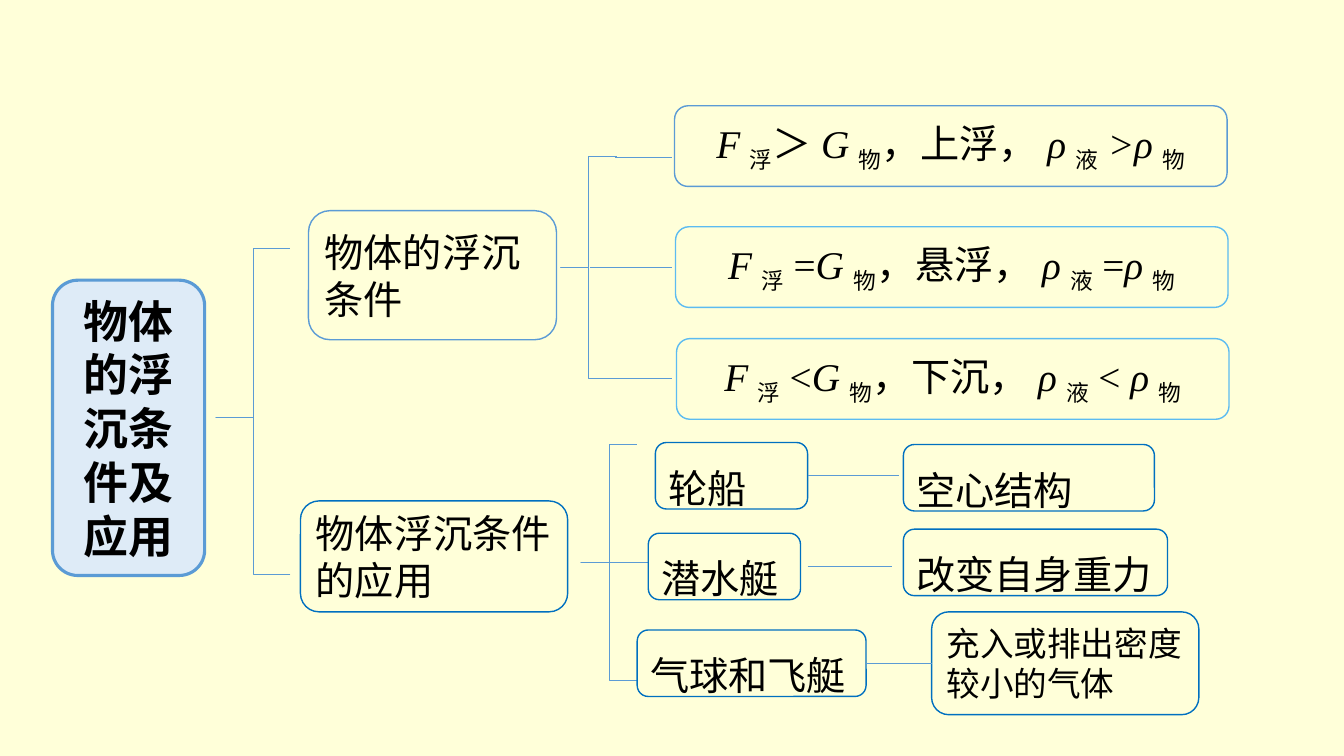
from pptx import Presentation
from pptx.dml.color import RGBColor
from pptx.enum.shapes import MSO_CONNECTOR, MSO_SHAPE
from pptx.enum.text import MSO_ANCHOR, MSO_AUTO_SIZE, PP_ALIGN
from pptx.oxml.ns import qn
from pptx.util import Inches, Pt
from lxml.etree import SubElement

COLORS = {"page": "FFFFD9", "root": "DEEBF7", "branch": "5B9BD5",
          "application": "0070C0", "formula": "5CBBF1", "text": "000000"}
VARIABLE, SUBSCRIPT, PLAIN = {"italic": True}, {"baseline": -25000}, {}


def rgb(name):
    return RGBColor.from_string(COLORS[name])


def add_outline(slide, preset, box, color, weight, fill=None):
    outline = slide.shapes.add_shape(preset, *map(Inches, box))
    outline.shadow.inherit = False
    if fill:
        outline.fill.solid()
        outline.fill.fore_color.rgb = rgb(fill)
    else:
        outline.fill.background()
    outline.line.color.rgb = rgb(color)
    outline.line.width = Pt(weight)
    return outline


def add_node(slide, box, runs, color="application", weight=1, fill=None,
             align=PP_ALIGN.LEFT, spacing=None, size=28, font="Arial", bold=False):
    """Rounded box holding one paragraph of (text, style) runs."""
    node = add_outline(slide, MSO_SHAPE.ROUNDED_RECTANGLE, box, color, weight, fill)
    frame = node.text_frame
    frame.word_wrap = True
    frame.vertical_anchor = MSO_ANCHOR.MIDDLE
    paragraph = frame.paragraphs[0]
    paragraph.alignment = align
    if spacing:
        paragraph.line_spacing = spacing
    for text, style in runs:
        run = paragraph.add_run()
        run.text = text
        look = {"name": font, "size": Pt(size), "bold": bold,
                "italic": style.get("italic", False)}
        for key, value in look.items():
            setattr(run.font, key, value)
        run.font.color.rgb = rgb("text")
        if "baseline" in style:
            run._r.get_or_add_rPr().set("baseline", str(style["baseline"]))
    return node


def add_brace(slide, box, middle=0.5):
    brace = add_outline(slide, MSO_SHAPE.LEFT_BRACE, box, "branch", 0.5)
    brace.adjustments[0] = 0
    brace.adjustments[1] = middle


def add_link(slide, x1, x2, y, begin=None, end=None):
    link = slide.shapes.add_connector(
        MSO_CONNECTOR.STRAIGHT, *map(Inches, (x1, y, x2, y)))
    link.line.color.rgb = rgb("branch")
    link.line.width = Pt(0.5)
    SubElement(link._element.spPr, qn("a:effectLst"))
    if begin:
        link.begin_connect(begin, 3)
    if end:
        link.end_connect(end, 1)


def add_root(slide, left, top):
    """Main topic and the brace to its two branches."""
    topic = add_node(slide, (left, top, 1.51, 2.93), [("物体的浮沉条件及应用", PLAIN)],
                     color="branch", weight=2.25, fill="root",
                     align=PP_ALIGN.CENTER, size=32, bold=True)
    topic.text_frame.auto_size = MSO_AUTO_SIZE.SHAPE_TO_FIT_TEXT
    add_brace(slide, (left + 1.62, top - 0.32, 0.74, 3.24), 0.52)


def add_conditions(slide, left, top):
    """Floating conditions: branch title, brace and three formulas."""
    add_node(slide, (left, top + 1.04, 2.46, 1.28), [("物体的浮沉条件", PLAIN)],
             color="branch")
    add_brace(slide, (left + 2.5, top + 0.5, 0.56, 2.2))
    formulas = [
        (0, "branch", "＞", "上浮", (">", VARIABLE)),
        (1.2, "formula", "=", "悬浮", ("=", PLAIN)),
        (2.31, "formula", "<", "下沉", ("< ", PLAIN)),
    ]
    for row, (offset, color, force_sign, motion, density_sign) in enumerate(formulas):
        runs = [("F", VARIABLE), ("浮", SUBSCRIPT), (force_sign, PLAIN),
                ("G", VARIABLE), ("物", SUBSCRIPT), (f"，{motion}，", PLAIN),
                ("ρ", VARIABLE), ("液", SUBSCRIPT), density_sign,
                ("ρ", VARIABLE), ("物", SUBSCRIPT)]
        add_node(slide, (left + 3.63 + 0.01 * row, top + offset, 5.48, 0.8), runs,
                 color=color, align=PP_ALIGN.CENTER, font="Times New Roman")
    for start, y in [(3.04, 0.51), (2.79, 1.6), (3.04, 2.7)]:
        add_link(slide, left + start, left + 3.61, top + y)


def add_applications(slide, left, top):
    """Applications: branch title, brace and three examples with their means."""
    add_node(slide, (left, top + 0.58, 2.65, 1.1), [("物体浮沉条件的应用", PLAIN)])
    add_brace(slide, (left + 2.78, top + 0.02, 0.56, 2.34))
    add_link(slide, left + 2.88, left + 3.45, top + 1.19)

    def example(x, y, width, text):
        return add_node(slide, (left + x, top + y, width, 0.66), [(text, PLAIN)],
                        spacing=1.5)

    ship = example(3.52, 0, 1.51, "轮船")
    example(3.45, 0.9, 1.51, "潜水艇")
    balloon = example(3.34, 1.86, 2.27, "气球和飞艇")
    example(5.98, 0.02, 2.49, "空心结构")
    example(5.98, 0.86, 2.62, "改变自身重力")
    gas = add_node(slide, (left + 6.26, top + 1.68, 2.65, 1.02),
                   [("充入或排出密度较小的气体", PLAIN)], size=24)

    add_link(slide, left + 5.03, left + 5.94, top + 0.33, begin=ship)
    add_link(slide, left + 5.03, left + 5.87, top + 1.23)
    add_link(slide, left + 5.61, left + 6.26, top + 2.19, begin=balloon, end=gas)


def main():
    deck = Presentation()
    deck.slide_width, deck.slide_height = Inches(13.33), Inches(7.5)
    slide = deck.slides.add_slide(deck.slide_layouts[6])
    slide.background.fill.solid()
    slide.background.fill.fore_color.rgb = rgb("page")
    add_root(slide, 0.52, 2.78)
    add_conditions(slide, 3.06, 1.05)
    add_applications(slide, 2.98, 4.39)
    deck.save("out.pptx")


if __name__ == "__main__":
    main()
